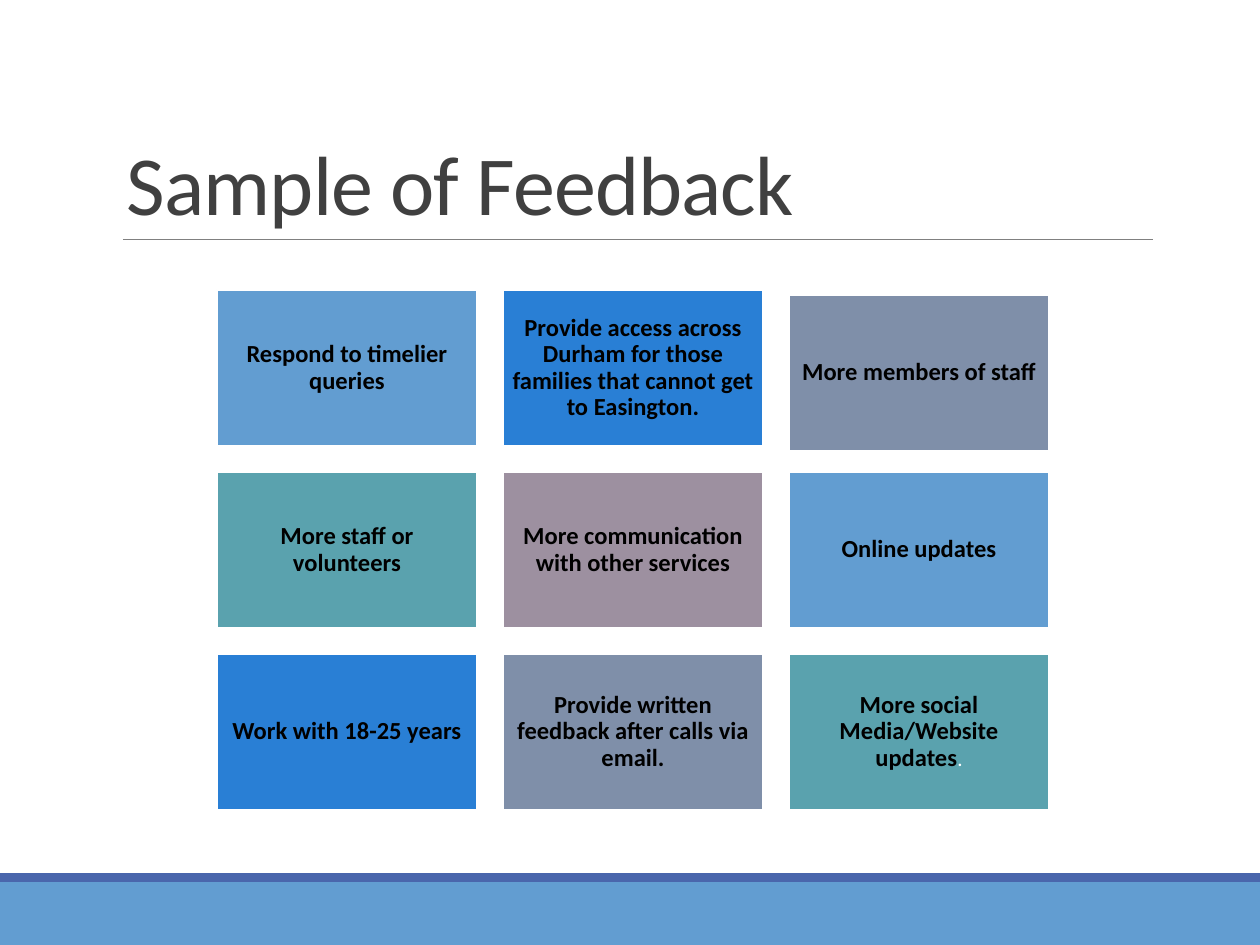
from pptx import Presentation
from pptx.dml.color import RGBColor
from pptx.enum.shapes import MSO_CONNECTOR, MSO_SHAPE
from pptx.enum.text import MSO_ANCHOR, MSO_AUTO_SIZE, PP_ALIGN
from pptx.oxml.ns import qn
from pptx.util import Emu, Pt
from lxml import etree

RECTANGLE = MSO_SHAPE.RECTANGLE
STRAIGHT = MSO_CONNECTOR.STRAIGHT
LEFT, CENTER = PP_ALIGN.LEFT, PP_ALIGN.CENTER
MIDDLE, BOTTOM = MSO_ANCHOR.MIDDLE, MSO_ANCHOR.BOTTOM
NO_AUTOFIT = MSO_AUTO_SIZE.NONE

EMU_PER_INCH = 914400
PX_PER_INCH = 126
SLIDE_WIDTH, SLIDE_HEIGHT = 1260, 945
TITLE_ONLY_LAYOUT = 5

COLORS = {
    "sky": "629DD1",
    "blue": "297FD5",
    "slate": "7F8FA9",
    "teal": "5AA2AE",
    "mauve": "9D90A0",
    "navy": "4A66AC",
    "rule": "808080",
    "title": "404040",
    "black": "000000",
    "white": "FFFFFF",
}

FORMATS = {
    "title": {"name": "Calibri", "size": Pt(48), "bold": False},
    "card": {"name": "Calibri", "size": Pt(14), "bold": True},
    "full_stop": {"name": "Calibri", "size": Pt(12), "bold": False},
}

TEXT_COLORS = {"title": "title", "card": "black", "full_stop": "white"}

CARD_LEFT, CARD_TOP = 217, 290
CARD_WIDTH, CARD_HEIGHT = 260, 156
COLUMN_STEP, ROW_STEP = 286, 182
CARD_INSET = 8
COLUMNS = 3
STAFF_CARD, STAFF_CARD_DROP = 2, 5

CARDS = [
    ("sky", [("Respond to timelier queries", "card")]),
    ("blue", [("Provide access across Durham for those families "
               "that cannot get to Easington.", "card")]),
    ("slate", [("More members of staff", "card")]),
    ("teal", [("More staff or volunteers", "card")]),
    ("mauve", [("More communication with other services", "card")]),
    ("sky", [("Online updates", "card")]),
    ("blue", [("Work with 18-25 years", "card")]),
    ("slate", [("Provide written feedback after calls via email.", "card")]),
    ("teal", [("More social Media/Website updates", "card"), (".", "full_stop")]),
]


def px(value):
    return Emu(round(value * EMU_PER_INCH / PX_PER_INCH))


def rgb(color):
    return RGBColor.from_string(COLORS[color])


def assign(target, values):
    for name, value in values.items():
        setattr(target, name, value)


class FeedbackSlide:
    def __init__(self, presentation):
        layout = presentation.slide_layouts[TITLE_ONLY_LAYOUT]
        self.slide = presentation.slides.add_slide(layout)

    def styled_run(self, paragraph, text, style):
        run = paragraph.add_run()
        run.text = text
        assign(run.font, FORMATS[style])
        run.font.color.rgb = rgb(TEXT_COLORS[style])
        return run

    def title(self, text, left, top, width, height):
        shape = self.slide.shapes.title
        assign(shape, {"left": px(left), "top": px(top),
                       "width": px(width), "height": px(height)})
        assign(shape.text_frame, {"vertical_anchor": BOTTOM, "word_wrap": True,
                                  "auto_size": NO_AUTOFIT})
        paragraph = shape.text_frame.paragraphs[0]
        assign(paragraph, {"alignment": LEFT, "line_spacing": 0.85})
        run = self.styled_run(paragraph, text, "title")
        run._r.get_or_add_rPr().set("spc", "-50")

    def rectangle(self, left, top, width, height, fill):
        shape = self.slide.shapes.add_shape(
            RECTANGLE, px(left), px(top), px(width), px(height))
        shape.shadow.inherit = False
        shape.fill.solid()
        shape.fill.fore_color.rgb = rgb(fill)
        shape.line.fill.background()
        return shape

    def card(self, left, top, fill, runs):
        shape = self.rectangle(left, top, CARD_WIDTH, CARD_HEIGHT, fill)
        shape.line.color.rgb = rgb("white")
        shape.line.width = Pt(1.25)
        frame = shape.text_frame
        assign(frame, {"word_wrap": True, "vertical_anchor": MIDDLE})
        for side in ("left", "top", "right", "bottom"):
            setattr(frame, f"margin_{side}", px(CARD_INSET))
        paragraph = frame.paragraphs[0]
        assign(paragraph, {"alignment": CENTER, "line_spacing": 0.9})
        for text, style in runs:
            self.styled_run(paragraph, text, style)

    def rule(self, left, right, y):
        connector = self.slide.shapes.add_connector(
            STRAIGHT, px(left), px(y), px(right), px(y))
        connector.line.color.rgb = rgb("rule")
        connector.line.width = Pt(0.5)
        etree.SubElement(connector._element.spPr, qn("a:effectLst"))


def main():
    presentation = Presentation()
    assign(presentation, {"slide_width": px(SLIDE_WIDTH),
                          "slide_height": px(SLIDE_HEIGHT)})
    page = FeedbackSlide(presentation)
    page.rectangle(0, 882, SLIDE_WIDTH, 63, "sky")
    page.rectangle(0, 873, SLIDE_WIDTH, 9, "navy")
    page.rule(123, 1153, 239)
    page.title("Sample of Feedback", 114, 39, 1039, 200)
    for index, (fill, runs) in enumerate(CARDS):
        row, column = divmod(index, COLUMNS)
        drop = STAFF_CARD_DROP if index == STAFF_CARD else 0
        page.card(CARD_LEFT + column * COLUMN_STEP,
                  CARD_TOP + row * ROW_STEP + drop, fill, runs)
    presentation.save("out.pptx")


if __name__ == "__main__":
    main()
